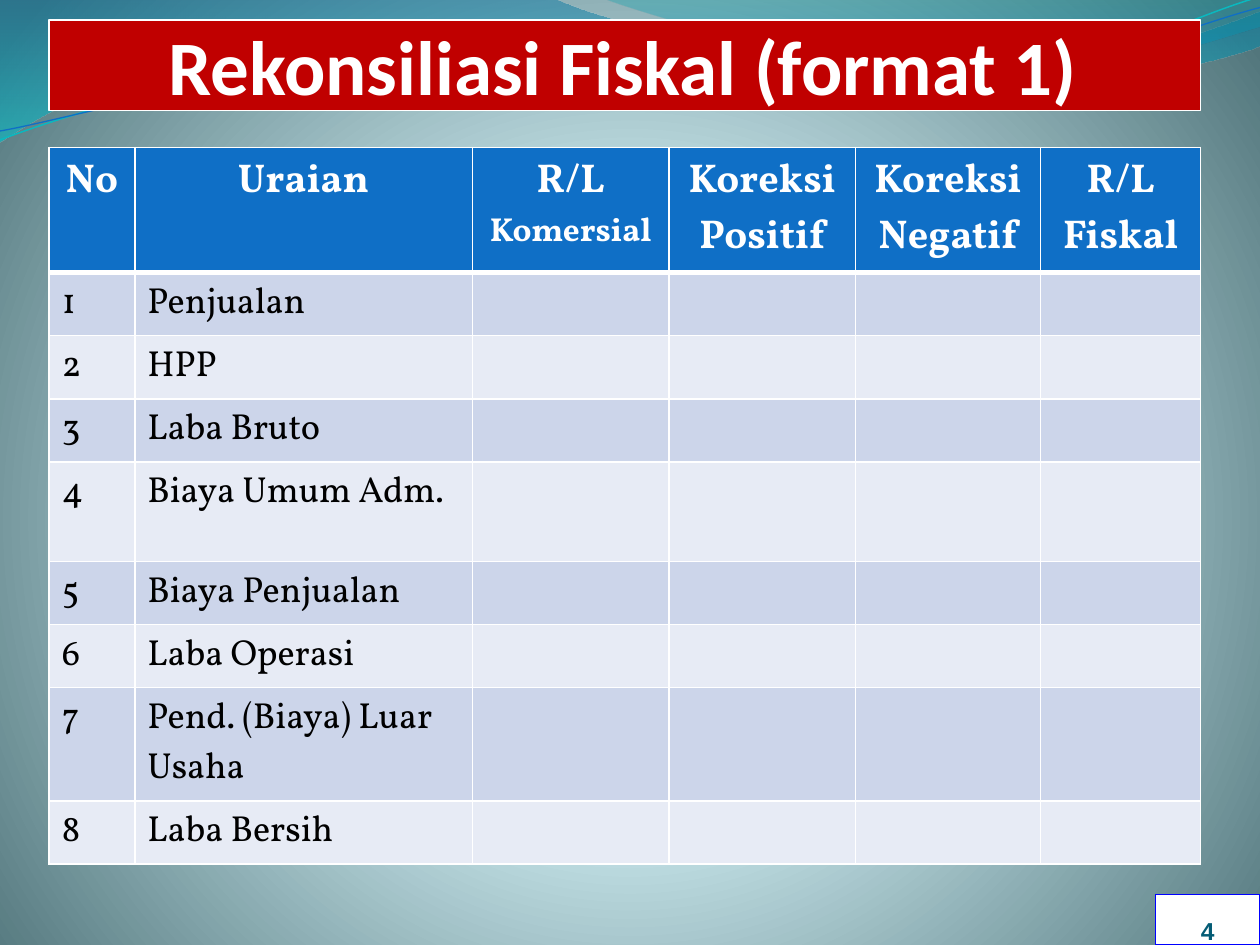
from math import cos, radians, sin

from pptx import Presentation
from pptx.dml.color import RGBColor
from pptx.enum.shapes import MSO_SHAPE
from pptx.enum.text import MSO_ANCHOR, PP_ALIGN
from pptx.oxml import parse_xml
from pptx.oxml.ns import nsdecls
from pptx.util import Inches, Pt

WHITE, BLUE, RED = "FFFFFF", "0F6FC6", "C00000"
BANDS = ("CCD5EA", "E7EBF5")
COLUMN_WIDTHS = (0.68, 2.68, 1.56, 1.48, 1.47, 1.27)
ROW_HEIGHTS = (0.86, 0.5, 0.5, 0.5, 0.79, 0.5, 0.5, 0.79, 0.5)
HEADINGS = (
    [("No", 23)],
    [("Uraian", 23)],
    [("R/L ", 23), ("Komersial", 19)],
    [("Koreksi Positif", 23)],
    [("Koreksi Negatif", 23)],
    [("R/L Fiskal", 23)],
)
ITEMS = ("Penjualan", "HPP", "Laba Bruto", "Biaya Umum Adm.", "Biaya Penjualan",
         "Laba Operasi", "Pend. (Biaya) Luar Usaha", "Laba Bersih")

# Each curve is a list of segments: one point for a straight, three for a cubic
WIDE_WAVE = [
    [(0, -0.01)], [(4.4, -0.01)],
    [(4.76, 0.17), (6.64, 0.63), (7.58, 0.63)],
    [(8.53, 0.63), (9.58, 0.26), (10, 0.09)],
    [(10.01, 0.36)],
    [(9.83, 0.44), (8.7, 0.76), (7.46, 0.75)],
    [(6.22, 0.75), (3.82, 0.28), (2.57, 0.34)],
    [(1.29, 0.35), (0.46, 0.83), (-0.01, 1.13)],
]
RIGHT_WAVE = [
    [(4.79, -0.01)],
    [(5.09, 0.11), (6.82, 0.62), (7.69, 0.65)],
    [(8.56, 0.69), (9.61, 0.32), (10, 0.21)],
    [(10, 0)],
]
CYAN_STRAND = [
    [(0, 1.11)],
    [(0.48, 0.93), (1.58, 0.57), (2.77, 0.52)],
    [(3.95, 0.47), (5.93, 0.89), (7.13, 0.8)],
    [(8.33, 0.71), (9.38, 0.15), (9.98, -0.02)],
]
BLUE_STRAND = [
    [(0, 1.04)],
    [(0.47, 0.96), (1.64, 0.61), (2.83, 0.56)],
    [(4.03, 0.51), (5.97, 0.83), (7.17, 0.75)],
    [(8.36, 0.67), (9.41, 0.21), (10, 0.06)],
]
STRAND_TILT = -2.7


def color(value):
    return RGBColor.from_string(value)


def gradient(stops, direction):
    """Gradient fill from (position, colour, opacity) stops."""
    marks = "".join(
        f'<a:gs pos="{position * 1000}"><a:srgbClr val="{value}">'
        f'<a:alpha val="{opacity * 1000}"/></a:srgbClr></a:gs>'
        for position, value, opacity in stops)
    return (f'<a:gradFill {nsdecls("a")} rotWithShape="1"><a:gsLst>{marks}</a:gsLst>'
            f'{direction}</a:gradFill>')


def set_background(page):
    stops = [(0, "DEFBFF", 100), (25, "DDFAFF", 100), (100, "52767C", 100)]
    glow = ('<a:path path="circle"><a:fillToRect l="10000" t="110000" '
            'r="10000" b="100000"/></a:path>')
    page.element.cSld.insert(0, parse_xml(
        f'<p:bg {nsdecls("p", "a")}><p:bgPr>{gradient(stops, glow)}'
        '<a:effectLst/></p:bgPr></p:bg>'))


def turn(segments, angle, center):
    """Rotate the segments about a center, in degrees."""
    c, s = cos(radians(angle)), sin(radians(angle))
    cx, cy = center
    return [[(cx + (x - cx) * c - (y - cy) * s, cy + (x - cx) * s + (y - cy) * c)
             for x, y in segment] for segment in segments]


def add_curve(page, segments, close):
    anchors = [tuple(map(Inches, segment[-1])) for segment in segments]
    builder = page.shapes.build_freeform(*anchors[0])
    builder.add_line_segments(anchors[1:], close=close)
    curve = builder.convert_to_shape()
    curve.shadow.inherit = False
    # Turn the straights of three-point segments into cubics
    straights = list(curve.element.iter("{*}lnTo"))
    for straight, segment in zip(straights, segments[1:]):
        if len(segment) == 3:
            points = "".join(
                f'<a:pt x="{Inches(x) - curve.left}" y="{Inches(y) - curve.top}"/>'
                for x, y in segment)
            straight.getparent().replace(straight, parse_xml(
                f'<a:cubicBezTo {nsdecls("a")}>{points}</a:cubicBezTo>'))
    return curve


def add_wave(page, segments, stops):
    wave = add_curve(page, segments, True)
    wave.line.fill.background()
    wave.fill.solid()
    solid = wave.element.spPr.find("{*}solidFill")
    vertical = '<a:lin ang="5400000" scaled="0"/>'
    solid.getparent().replace(solid, parse_xml(gradient(stops, vertical)))


def add_strand(page, segments, center, value, width):
    strand = add_curve(page, turn(segments, -STRAND_TILT, center), False)
    strand.rotation = STRAND_TILT
    strand.fill.background()
    strand.line.color.rgb = color(value)
    strand.line.width = Pt(width)


def add_span(para, text, size, font, value, bold):
    span = para.add_run()
    span.text = text
    span.font.color.rgb = color(value)
    for name, setting in {"size": Pt(size), "name": font, "bold": bold}.items():
        setattr(span.font, name, setting)


def add_box(page, place, fill, line, text, size, font, value, right_inset=0):
    box = page.shapes.add_shape(MSO_SHAPE.RECTANGLE, *map(Inches, place))
    box.shadow.inherit = False
    box.fill.solid()
    box.fill.fore_color.rgb = color(fill)
    box.line.color.rgb = color(line)
    box.line.width = Pt(0.75)
    layout = {"margin_left": 0, "margin_top": 0, "margin_right": Inches(right_inset),
              "margin_bottom": 0, "vertical_anchor": MSO_ANCHOR.BOTTOM, "word_wrap": True}
    for name, setting in layout.items():
        setattr(box.text_frame, name, setting)
    para = box.text_frame.paragraphs[0]
    para.alignment = PP_ALIGN.CENTER
    add_span(para, text, size, font, value, True)


def style_cell(cell, fill, top, bottom):
    cell.fill.solid()
    cell.fill.fore_color.rgb = color(fill)
    properties = cell._tc.get_or_add_tcPr()
    widths = {"lnL": 1, "lnR": 1, "lnT": top, "lnB": bottom}
    for index, (side, width) in enumerate(widths.items()):
        properties.insert(index, parse_xml(
            f'<a:{side} {nsdecls("a")} w="{Pt(width)}"><a:solidFill>'
            f'<a:srgbClr val="{WHITE}"/></a:solidFill></a:{side}>'))


def add_reconciliation_table(page):
    table = page.shapes.add_table(
        len(ROW_HEIGHTS), len(COLUMN_WIDTHS),
        *map(Inches, (0.39, 1.17, sum(COLUMN_WIDTHS), sum(ROW_HEIGHTS)))).table
    for column, width in zip(table.columns, COLUMN_WIDTHS):
        column.width = Inches(width)
    for row, height in zip(table.rows, ROW_HEIGHTS):
        row.height = Inches(height)

    # Header row
    for column, parts in enumerate(HEADINGS):
        cell = table.cell(0, column)
        style_cell(cell, BLUE, 1, 3)
        para = cell.text_frame.paragraphs[0]
        para.alignment = PP_ALIGN.CENTER
        for text, size in parts:
            add_span(para, text, size, "Vollkorn", WHITE, True)

    # Numbered items, with the amount columns left open
    for number, item in enumerate(ITEMS, 1):
        for column in range(len(COLUMN_WIDTHS)):
            style_cell(table.cell(number, column), BANDS[(number - 1) % 2],
                       3 if number == 1 else 1, 1)
        for column, text in enumerate((str(number), item)):
            para = table.cell(number, column).text_frame.paragraphs[0]
            add_span(para, text, 20.7, "Vollkorn", "000000", False)


def main():
    deck = Presentation()
    deck.slide_width, deck.slide_height = Inches(10), Inches(7.5)
    page = deck.slides.add_slide(deck.slide_layouts[6])

    # Backdrop
    set_background(page)
    add_wave(page, WIDE_WAVE, [(0, "0074A1", 45), (100, "00C6CF", 55)])
    add_wave(page, RIGHT_WAVE, [(0, "00A1A9", 30), (80, "008BBF", 45)])
    add_strand(page, CYAN_STRAND, (4.99, 0.58), "0AB8BF", 0.85)
    add_strand(page, BLUE_STRAND, (5, 0.59), BLUE, 0.75)

    # Title, table and page number
    add_box(page, (0.39, 0.16, 9.14, 0.72), RED, WHITE,
            "Rekonsiliasi Fiskal (format 1)", 44, "Calibri", WHITE, 0.02)
    add_reconciliation_table(page)
    add_box(page, (9.17, 7.1, 0.83, 0.4), WHITE, "0000FF", "4", 14, "Arial", "045C75")

    deck.save("out.pptx")


if __name__ == "__main__":
    main()
